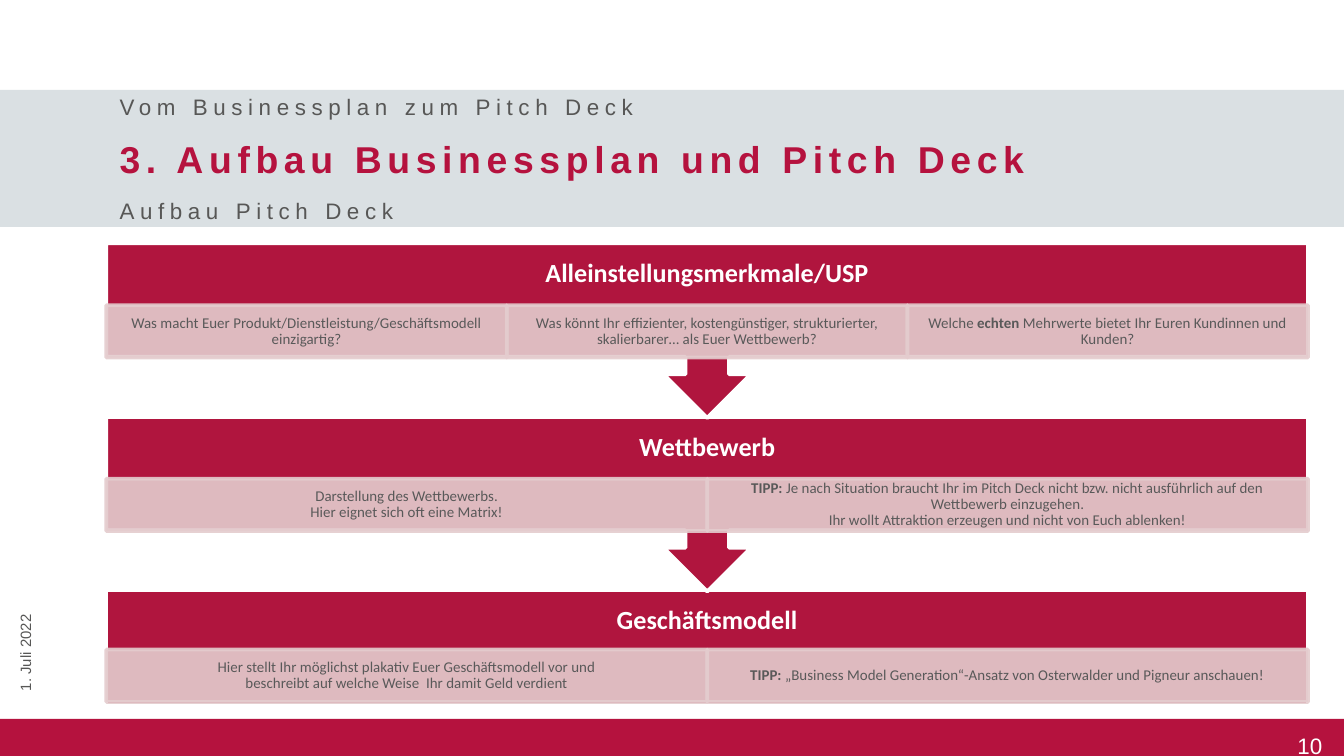
from dataclasses import dataclass

from lxml.etree import SubElement
from pptx import Presentation
from pptx.dml.color import RGBColor
from pptx.enum.shapes import MSO_SHAPE
from pptx.enum.text import MSO_ANCHOR, PP_ALIGN
from pptx.oxml.ns import qn
from pptx.util import Cm, Pt


@dataclass(frozen=True)
class Theme:
    red: str = "B5123E"
    block_red: str = "B0153E"
    band_grey: str = "DAE0E3"
    pink: str = "E4CCCE"
    white: str = "FFFFFF"
    heading_grey: str = "575756"
    detail_grey: str = "595959"
    heading_font: str = "Arial"
    block_font: str = "Calibri"
    title_size: int = 20
    block_size: int = 14
    heading_size: int = 12
    detail_size: int = 8


THEME = Theme()

# Geometry in centimetres
SLIDE_WIDTH, SLIDE_HEIGHT = 25.4, 14.29
LEFT, FLOW_WIDTH = 2.01, 22.71
FLOW_TOP, STEP = 4.6, 3.28
CALLOUT_HEIGHT, LAST_HEIGHT = 3.3, 2.16
HEADER_HEIGHT, DETAIL_HEIGHT = 1.17, 0.99

# Each step: heading, offset of its details, details as (text, bold) runs
STEPS = [
    ("Alleinstellungsmerkmale/USP", 1.17, [
        [("Was macht Euer Produkt/Dienstleistung/Geschäftsmodell einzigartig?", False)],
        [("Was könnt Ihr effizienter, kostengünstiger, strukturierter, "
          "skalierbarer… als Euer Wettbewerb?", False)],
        [("Welche ", False), ("echten", True),
         (" Mehrwerte bietet Ihr Euren Kundinnen und Kunden?", False)],
    ]),
    ("Wettbewerb", 1.17, [
        [("Darstellung des Wettbewerbs.\nHier eignet sich oft eine Matrix!", False)],
        [("TIPP: ", True),
         ("Je nach Situation braucht Ihr im Pitch Deck nicht bzw. nicht ausführlich "
          "auf den Wettbewerb einzugehen.\n"
          "Ihr wollt Attraktion erzeugen und nicht von Euch ablenken!", False)],
    ]),
    ("Geschäftsmodell", 1.12, [
        [("Hier stellt Ihr möglichst plakativ Euer Geschäftsmodell vor und\n"
          "beschreibt auf welche Weise  Ihr damit Geld verdient", False)],
        [("TIPP: ", True),
         ("„Business Model Generation“-Ansatz von Osterwalder und Pigneur "
          "anschauen!", False)],
    ]),
]


def add_block(slide, box, fill, line=None, kind=MSO_SHAPE.RECTANGLE):
    shape = slide.shapes.add_shape(kind, *map(Cm, box))
    shape.shadow.inherit = False
    shape.fill.solid()
    shape.fill.fore_color.rgb = RGBColor.from_string(fill)
    if line:
        shape.line.color.rgb = RGBColor.from_string(line)
        shape.line.width = Pt(2)
    else:
        shape.line.fill.background()
    return shape


def set_frame(text_frame, margins, anchor=MSO_ANCHOR.MIDDLE):
    text_frame.word_wrap = True
    text_frame.vertical_anchor = anchor
    text_frame.margin_left = text_frame.margin_right = Cm(margins[0])
    text_frame.margin_top = text_frame.margin_bottom = Cm(margins[1])


def format_font(font, name, size, color, bold=False):
    font.name, font.size, font.bold = name, Pt(size), bold
    font.color.rgb = RGBColor.from_string(color)


def add_label(slide, box, text, size, color, font=THEME.heading_font, bold=False,
              align=PP_ALIGN.LEFT, margins=(0.25, 0.13), anchor=MSO_ANCHOR.MIDDLE,
              line_spacing=None, tracking=None):
    shape = slide.shapes.add_textbox(*map(Cm, box))
    set_frame(shape.text_frame, margins, anchor)
    shape.text_frame.text = text
    paragraph = shape.text_frame.paragraphs[0]
    paragraph.alignment = align
    paragraph.line_spacing = line_spacing
    run = paragraph.runs[0]
    format_font(run.font, font, size, color, bold)
    if tracking:
        run._r.get_or_add_rPr().set("spc", str(tracking * 100))
    return shape


def add_detail(slide, box, parts):
    shape = add_block(slide, box, THEME.pink, THEME.pink)
    # Fill and outline are both 90 % opaque
    for color in shape._element.spPr.iter(qn("a:srgbClr")):
        SubElement(color, qn("a:alpha"), val="90000")
    set_frame(shape.text_frame, (0.15, 0.03))
    paragraph = shape.text_frame.paragraphs[0]
    paragraph.alignment = PP_ALIGN.CENTER
    paragraph.line_spacing = 0.9
    for text, bold in parts:
        for index, line in enumerate(text.split("\n")):
            if index:
                paragraph.add_line_break()
            run = paragraph.add_run()
            run.text = line
            format_font(run.font, THEME.block_font, THEME.detail_size,
                        THEME.detail_grey, bold)


def add_step(slide, index, heading, detail_offset, details):
    top = FLOW_TOP + index * STEP
    if index == len(STEPS) - 1:
        add_block(slide, (LEFT, top, FLOW_WIDTH, LAST_HEIGHT),
                  THEME.block_red, THEME.white)
    else:
        callout = add_block(slide, (LEFT, top, FLOW_WIDTH, CALLOUT_HEIGHT),
                            THEME.block_red, THEME.white, MSO_SHAPE.UP_ARROW_CALLOUT)
        callout.rotation = 180
    add_label(slide, (LEFT, top, FLOW_WIDTH, HEADER_HEIGHT), heading,
              THEME.block_size, THEME.white, THEME.block_font, bold=True,
              align=PP_ALIGN.CENTER, margins=(0.28, 0.28), line_spacing=0.9)
    width = FLOW_WIDTH / len(details)
    for column, parts in enumerate(details):
        add_detail(slide, (LEFT + column * width, top + detail_offset,
                           width, DETAIL_HEIGHT), parts)


def main():
    presentation = Presentation()
    presentation.slide_width, presentation.slide_height = Cm(SLIDE_WIDTH), Cm(SLIDE_HEIGHT)
    slide = presentation.slides.add_slide(presentation.slide_layouts[6])

    # Footer band with page number, heading band
    add_block(slide, (0, 13.59, SLIDE_WIDTH, 0.7), THEME.red)
    add_label(slide, (21.79, 13.36, 3.2, 0.99), "10", THEME.heading_size, THEME.white,
              align=PP_ALIGN.RIGHT, margins=(0, 0), line_spacing=Pt(28))
    add_block(slide, (0, 1.7, SLIDE_WIDTH, 2.59), THEME.band_grey)

    # Flow, lowest step first so that the arrows lie on top
    for index in reversed(range(len(STEPS))):
        add_step(slide, index, *STEPS[index])

    # Headings
    heading_width = SLIDE_WIDTH - LEFT
    add_label(slide, (LEFT, 2.44, heading_width, 1.12),
              "3. Aufbau Businessplan und Pitch Deck",
              THEME.title_size, THEME.red, bold=True, tracking=3)
    for top, height, text in [(3.61, 0.76, "Aufbau Pitch Deck"),
                              (1.83, 0.38, "Vom Businessplan zum Pitch Deck")]:
        add_label(slide, (LEFT, top, heading_width, height), text,
                  THEME.heading_size, THEME.heading_grey, tracking=3)

    # Date along the left edge
    date = add_label(slide, (-1.07, 11.46, 3.1, 0.61), "1. Juli 2022",
                     THEME.detail_size, THEME.heading_grey, anchor=MSO_ANCHOR.TOP)
    date.rotation = 270

    presentation.save("out.pptx")


if __name__ == "__main__":
    main()
